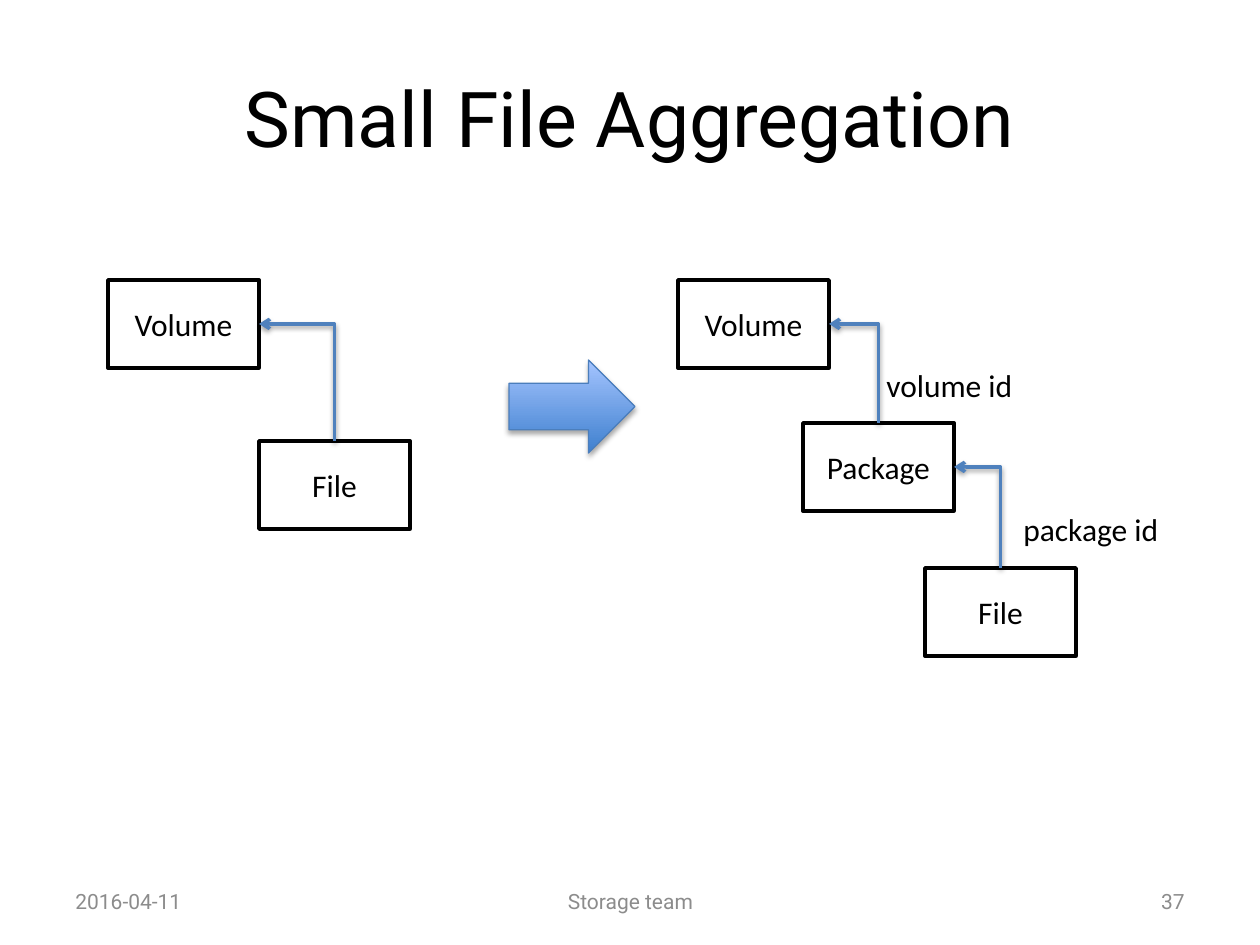
from pptx import Presentation
from pptx.dml.color import RGBColor
from pptx.enum.shapes import MSO_CONNECTOR, MSO_SHAPE
from pptx.enum.text import MSO_ANCHOR, MSO_AUTO_SIZE, PP_ALIGN
from pptx.oxml.ns import qn
from pptx.util import Emu, Pt
from lxml.etree import SubElement

COLORS = {
    "black": "000000",
    "white": "FFFFFF",
    "muted": "8C8C8C",
    "link": "4F81BD",
    "arrow_line": "4B7EBC",
    "arrow_dark": "3F80CE",
    "arrow_light": "A4C4FF",
}
BOX_WIDTH, BOX_HEIGHT = 151, 88


def px(length):
    return Emu(round(length * 914400 / 126))


def color(name):
    return RGBColor.from_string(COLORS[name])


def write_text(shape, text, size=18, font="Calibri", fill="black",
               align=PP_ALIGN.CENTER, anchor=MSO_ANCHOR.MIDDLE, wrap=True):
    frame = shape.text_frame
    frame.word_wrap = wrap
    frame.vertical_anchor = anchor
    paragraph = frame.paragraphs[0]
    paragraph.alignment = align
    run = paragraph.add_run()
    run.text = text
    run.font.size = Pt(size)
    run.font.name = font
    run.font.color.rgb = color(fill)


def add_text(slide, box, text, **text_format):
    shape = slide.shapes.add_textbox(*map(px, box))
    write_text(shape, text, **text_format)
    return shape


def add_shadow(shape, opacity, distance):
    effects = SubElement(shape._element.spPr, qn("a:effectLst"))
    shadow = SubElement(effects, qn("a:outerShdw"), blurRad=str(Pt(3.1)),
                        dist=str(Pt(distance)), dir="5400000", rotWithShape="0")
    shade = SubElement(shadow, qn("a:srgbClr"), val=COLORS["black"])
    SubElement(shade, qn("a:alpha"), val=str(opacity * 1000))


def add_process(slide, left, top, text):
    shape = slide.shapes.add_shape(MSO_SHAPE.FLOWCHART_PROCESS, px(left), px(top),
                                   px(BOX_WIDTH), px(BOX_HEIGHT))
    shape.shadow.inherit = False
    shape.fill.solid()
    shape.fill.fore_color.rgb = color("white")
    shape.line.color.rgb = color("black")
    shape.line.width = Pt(2)
    write_text(shape, text)
    return shape


def link_up(slide, child, parent):
    start_x, start_y = child.left + child.width // 2, child.top
    end_x, end_y = parent.left + parent.width, parent.top + parent.height // 2
    connector = slide.shapes.add_connector(MSO_CONNECTOR.ELBOW,
                                           start_x, start_y, end_x, end_y)
    connector.begin_connect(child, 0)
    connector.end_connect(parent, 3)
    run, rise = start_x - end_x, start_y - end_y
    connector.left = Emu((start_x + end_x - rise) // 2)
    connector.top = Emu((start_y + end_y - run) // 2)
    connector.width, connector.height = Emu(rise), Emu(run)
    properties = connector._element.spPr
    transform = properties.find(qn("a:xfrm"))
    transform.attrib.pop("flipH", None)
    transform.set("rot", "16200000")
    transform.set("flipV", "1")
    properties.find(qn("a:prstGeom")).set("prst", "bentConnector2")
    connector.line.color.rgb = color("link")
    connector.line.width = Pt(2)
    SubElement(properties.find(qn("a:ln")), qn("a:tailEnd"), type="arrow")
    add_shadow(connector, 38, 1.6)


def add_chain(slide, left, top, nodes):
    boxes = [add_process(slide, left + x, top + y, text) for x, y, text in nodes]
    for parent, child in zip(boxes, boxes[1:]):
        link_up(slide, child, parent)


def add_label(slide, left, top, width, text):
    label = add_text(slide, (left, top, width, 50), text, align=PP_ALIGN.LEFT,
                     anchor=MSO_ANCHOR.TOP, wrap=False)
    label.text_frame.auto_size = MSO_AUTO_SIZE.SHAPE_TO_FIT_TEXT


def add_big_arrow(slide, box):
    arrow = slide.shapes.add_shape(MSO_SHAPE.RIGHT_ARROW, *map(px, box))
    arrow.fill.gradient()
    arrow.fill.gradient_angle = 90
    for stop, name in zip(arrow.fill.gradient_stops, ("arrow_dark", "arrow_light")):
        stop.color.rgb = color(name)
    arrow.line.color.rgb = color("arrow_line")
    arrow.line.width = Pt(0.75)
    add_shadow(arrow, 35, 1.8)


def add_footer(slide, left, top, height):
    for x, width, text, align in (
        (0, 294, "2016-04-11", PP_ALIGN.LEFT),
        (368, 399, "Storage team", PP_ALIGN.CENTER),
        (840, 294, "37", PP_ALIGN.RIGHT),
    ):
        add_text(slide, (left + x, top, width, height), text,
                 size=12, font="Roboto", fill="muted", align=align)


def add_package_side(slide, left, top):
    add_chain(slide, left, top,
              [(0, 0, "Volume"), (125, 143, "Package"), (247, 288, "File")])
    add_label(slide, left + 196, top + 80, 152, "volume id")
    add_label(slide, left + 333, top + 224, 162, "package id")


def main():
    presentation = Presentation()
    presentation.slide_width, presentation.slide_height = px(1260), px(945)
    slide = presentation.slides.add_slide(presentation.slide_layouts[6])
    add_text(slide, (63, 38, 1134, 158), "Small File Aggregation",
             size=44, font="Roboto")
    add_chain(slide, 108, 280, [(0, 0, "Volume"), (151, 161, "File")])
    add_big_arrow(slide, (509, 360, 126, 93))
    add_package_side(slide, 678, 280)
    add_footer(slide, 63, 876, 50)
    presentation.save("out.pptx")


if __name__ == "__main__":
    main()
